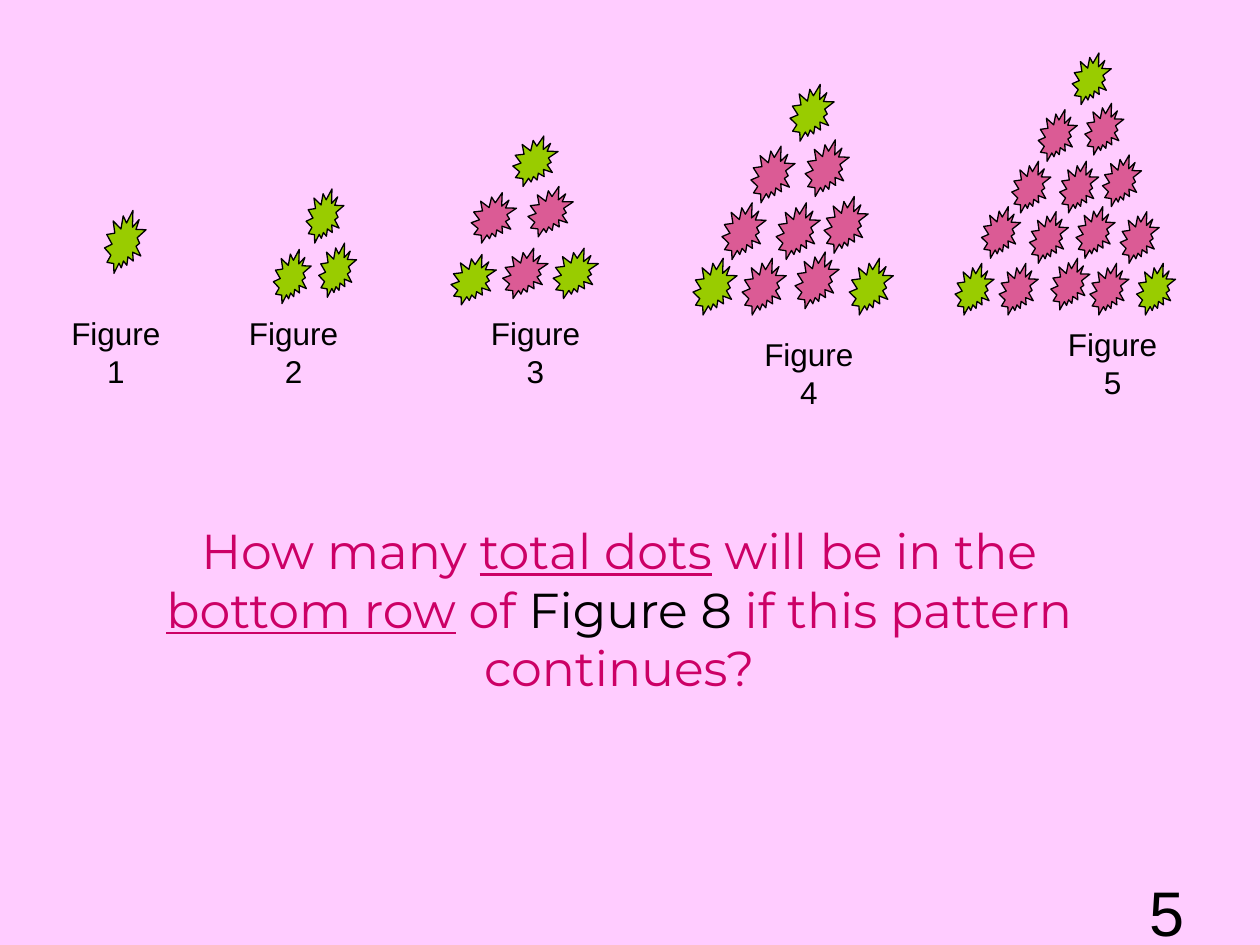
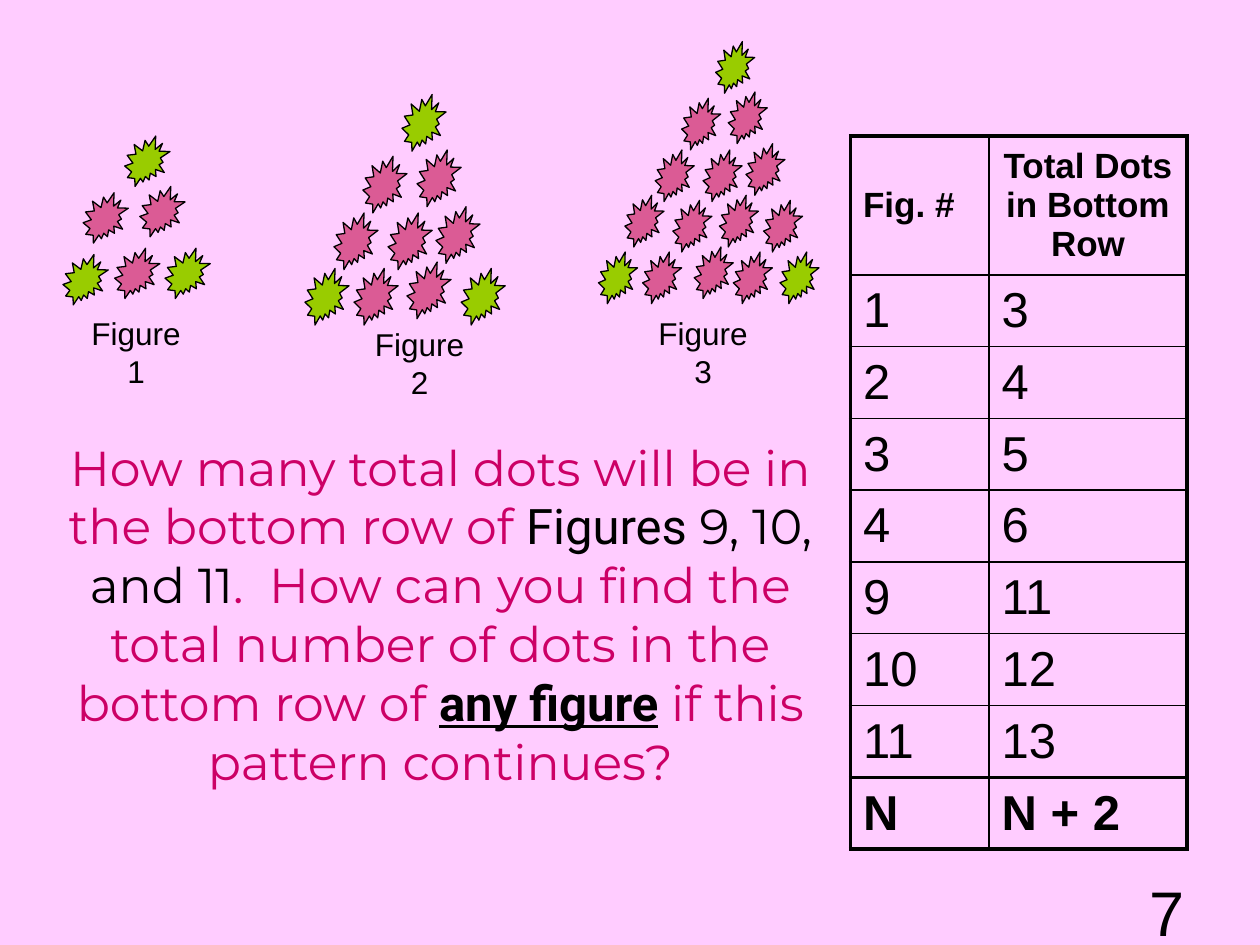
from pptx import Presentation
from pptx.dml.color import RGBColor as RGB
from pptx.enum.shapes import MSO_SHAPE as SHAPE
from pptx.enum.text import MSO_ANCHOR as ANCHOR, PP_ALIGN as ALIGN
from pptx.oxml import parse_xml
from pptx.oxml.ns import nsdecls
from pptx.util import Emu, Pt

EMU_PER_PX = 9144
COLORS = {"back": "FFCCFF", "corner": "99CC00", "inner": "DB5B95",
          "question": "CC0066", "ink": "000000"}

TRIANGLES = {
    1: ((33, 50), [[(0, 0)]]),
    2: ((30, 43), [[(26, 0)], [(0, 48), (36, 43)]]),
    3: ((36, 40), [[(49, 0)], [(16, 45), (61, 40)],
                   [(0, 94), (41, 89), (81, 89)]]),
    4: ((35, 45), [[(77, 0)], [(46, 49), (89, 44)],
                   [(23, 94), (66, 94), (104, 89)],
                   [(0, 138), (39, 138), (81, 133), (124, 138)]]),
    5: ((31, 41), [[(93, 0)], [(66, 45), (103, 40)],
                   [(45, 86), (83, 86), (117, 81)],
                   [(21, 122), (59, 126), (96, 122), (131, 126)],
                   [(0, 167), (35, 167), (76, 163), (107, 167), (144, 167)]]),
}


def px(n):
    return Emu(n * EMU_PER_PX)


def rgb(name):
    return RGB.from_string(COLORS[name])


def add_run(p, text, font="Arial", size=18, color="ink", bold=False, underline=False):
    r = p.add_run()
    r.text = text
    f = r.font
    f.name, f.size, f.bold, f.underline = font, Pt(size), bold, underline
    f.color.rgb = rgb(color)


class Deck:
    def __init__(self, width, height):
        self.prs = Presentation()
        self.prs.slide_width, self.prs.slide_height = px(width), px(height)
        self.s = None

    def slide(self, number):
        self.s = self.prs.slides.add_slide(self.prs.slide_layouts[6])
        fill = self.s.background.fill
        fill.solid()
        fill.fore_color.rgb = rgb("back")
        self.text(717, 683, 233, 52, [(str(number), {"size": 36})],
                  align=ALIGN.RIGHT, top=10)

    def text(self, x, y, w, h, runs, align=ALIGN.CENTER, anchor=ANCHOR.TOP,
             wrap=True, top=5):
        tf = self.s.shapes.add_textbox(px(x), px(y), px(w), px(h)).text_frame
        tf.word_wrap, tf.vertical_anchor, tf.margin_top = wrap, anchor, px(top)
        p = tf.paragraphs[0]
        p.alignment = align
        for text, style in runs:
            add_run(p, text, **style)

    def label(self, number, x, y):
        self.text(x, y, 100, 42, [(f"Figure {number}", {})],
                  anchor=ANCHOR.MIDDLE, wrap=False)

    def question(self, x, y, w, h, runs):
        base = {"font": "Montserrat", "size": 28, "color": "question"}
        self.text(x, y, w, h, [(text, base | style) for text, style in runs])

    def triangle(self, size, left, top):
        (w, h), rows = TRIANGLES[size]
        group = self.s.shapes.add_group_shape()
        for i, row in enumerate(rows):
            for j, (x, y) in enumerate(row):
                corner = i == 0 or (i == size - 1 and j in (0, i))
                sp = group.shapes.add_shape(SHAPE.EXPLOSION2, px(left + x),
                                            px(top + y), px(w), px(h))
                sp.shadow.inherit = False
                sp.fill.solid()
                sp.fill.fore_color.rgb = rgb("corner" if corner else "inner")
                sp.line.color.rgb = rgb("ink")
                sp.line.width = Pt(0.75)

    def border(self, cell, widths):
        tcPr = cell._tc.get_or_add_tcPr()
        for i, (side, width) in enumerate(zip("LRTB", widths)):
            tcPr.insert(i, parse_xml(
                f'<a:ln{side} {nsdecls("a")} w="{Pt(width)}"><a:solidFill>'
                f'<a:srgbClr val="{COLORS["ink"]}"/></a:solidFill></a:ln{side}>'))

    def table(self, x, y, cols, head_h, row_h, rows):
        last = len(rows) - 1
        height = head_h + row_h * last
        t = self.s.shapes.add_table(len(rows), len(cols), px(x), px(y),
                                    px(sum(cols)), px(height)).table
        t.first_row = t.horz_banding = False
        for j, w in enumerate(cols):
            t.columns[j].width = px(w)
        for i, row in enumerate(rows):
            head = i == 0
            t.rows[i].height = px(head_h if head else row_h)
            for j, text in enumerate(row):
                cell = t.cell(i, j)
                cell.fill.background()
                cell.vertical_anchor = ANCHOR.MIDDLE
                p = cell.text_frame.paragraphs[0]
                p.alignment = ALIGN.CENTER if head and j else ALIGN.LEFT
                add_run(p, text, size=20 if head else 28, bold=i in (0, last))
                thick = (j == 0, j == len(cols) - 1, i in (0, last), i >= last - 1)
                self.border(cell, [2.25 if edge else 1 for edge in thick])


def main():
    deck = Deck(1000, 750)
    ink = {"color": "ink"}
    under = {"underline": True}
    roboto = {"font": "Roboto", "color": "ink"}

    deck.slide(5)
    figures = [(83, 167, 42, 258), (217, 150, 183, 258), (358, 108, 375, 258),
               (550, 67, 592, 275), (758, 42, 833, 267)]
    for n, (x, y, label_x, label_y) in enumerate(figures, 1):
        deck.triangle(n, x, y)
        deck.label(n, label_x, label_y)
    deck.question(75, 408, 833, 195, [
        ("How many ", {}), ("total dots", under), (" will be in the ", {}),
        ("bottom row", under), (" of ", {}), ("Figure 8", ink),
        (" if this pattern continues?", {})])

    deck.slide(7)
    figures = [(50, 108, 58, 258), (242, 75, 283, 267), (475, 33, 508, 258)]
    for n, (x, y, label_x, label_y) in enumerate(figures, 1):
        deck.triangle(n + 2, x, y)
        deck.label(n, label_x, label_y)
    deck.question(33, 342, 633, 337, [
        ("How many total dots will be in the bottom row of ", {}),
        ("Figures", roboto), (" 9, 10, and 11", ink),
        (".  How can you find the total number of dots in the bottom row of ", {}),
        ("any figure", roboto | under | {"bold": True}),
        (" if this pattern continues?", {})])
    counts = [(str(n), str(n + 2)) for n in (1, 2, 3, 4, 9, 10, 11)]
    deck.table(675, 108, (110, 157), 109, 57,
               [("Fig. #", "Total Dots in Bottom Row"), *counts, ("N", "N + 2")])

    deck.prs.save("out.pptx")


if __name__ == "__main__":
    main()
